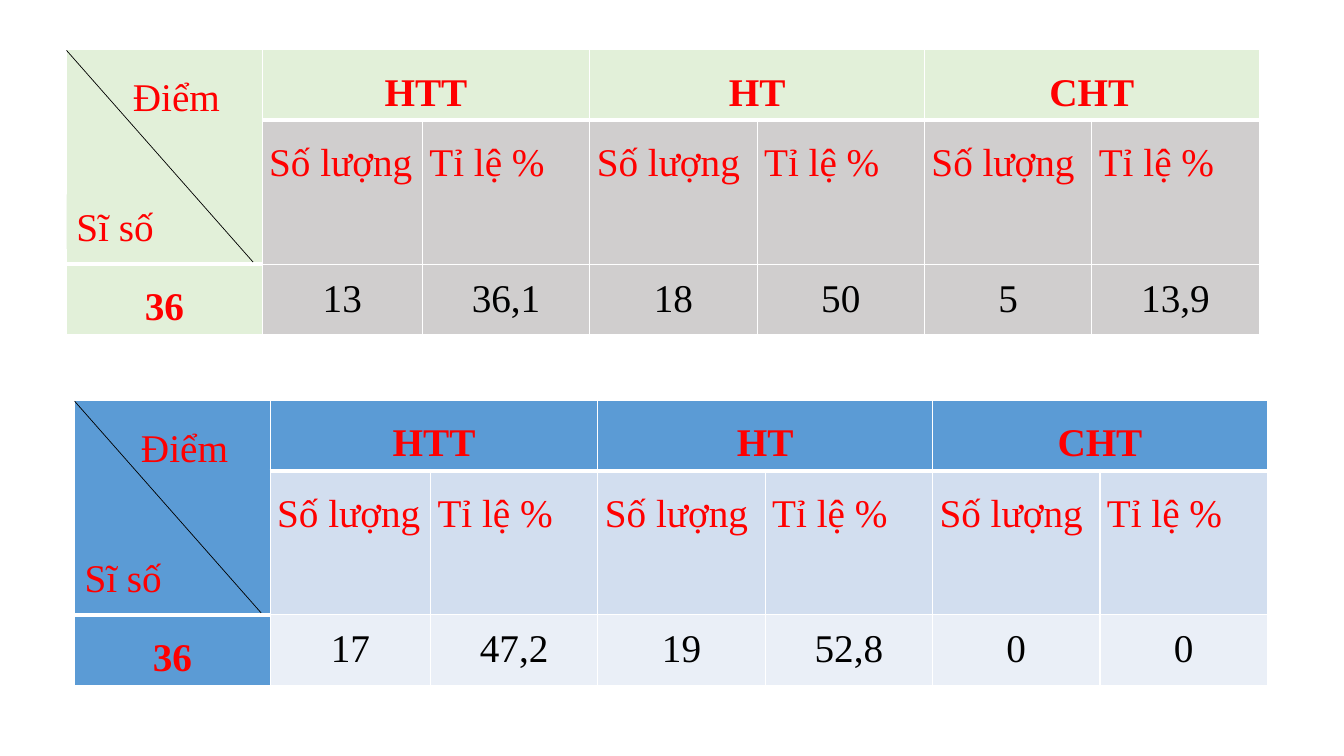
from lxml.etree import SubElement
from pptx import Presentation
from pptx.dml.color import RGBColor
from pptx.enum.shapes import MSO_CONNECTOR, MSO_SHAPE
from pptx.enum.text import MSO_ANCHOR, PP_ALIGN as Align
from pptx.oxml import parse_xml
from pptx.oxml.ns import nsdecls, qn
from pptx.util import Inches, Pt

FONT = "Times New Roman"
RED, BLACK, WHITE = "FF0000", "000000", "FFFFFF"
COLUMNS = [1.94, 1.59] + [1.66] * 5
ROWS = [0.7, 1.43, 0.7]
LEVELS = ["HTT", "HT", "CHT"]


def color(value):
    return RGBColor.from_string(value)


def write(frame, text, fill=RED, bold=False, align=Align.LEFT, spacing=1.07, after=0):
    paragraph = frame.paragraphs[0]
    paragraph.alignment = align
    paragraph.line_spacing = spacing
    paragraph.space_before = Pt(0)
    paragraph.space_after = Pt(after)
    run = paragraph.add_run()
    run.text = text
    run.font.name = FONT
    run.font.size = Pt(28)
    run.font.bold = bold
    run.font.color.rgb = color(fill)


def set_borders(cell, top, bottom):
    properties = cell._tc.get_or_add_tcPr()
    widths = {"lnL": 1, "lnR": 1, "lnT": top, "lnB": bottom}
    for index, (side, width) in enumerate(widths.items()):
        properties.insert(index, parse_xml(
            f'<a:{side} {nsdecls("a")} w="{Pt(width)}"><a:solidFill>'
            f'<a:srgbClr val="{WHITE}"/></a:solidFill></a:{side}>'))


def add_score_table(slide, left, top, values, header_fill, label_fill, value_fill):
    frame = slide.shapes.add_table(
        len(ROWS), len(COLUMNS), Inches(left), Inches(top),
        Inches(sum(COLUMNS)), Inches(sum(ROWS)))
    table = frame.table
    for column, width in zip(table.columns, COLUMNS):
        column.width = Inches(width)
    for row, height in zip(table.rows, ROWS):
        row.height = Inches(height)

    # Fills, margins and borders
    for r, body_fill in enumerate([header_fill, label_fill, value_fill]):
        for c in range(len(COLUMNS)):
            cell = table.cell(r, c)
            cell.fill.solid()
            cell.fill.fore_color.rgb = color(header_fill if c == 0 else body_fill)
            cell.margin_left = cell.margin_right = Inches(0.07)
            cell.margin_top = cell.margin_bottom = 0
            under_header = r == 1 or (r == 2 and c == 0)
            above_body = r == 0 or (r == 1 and c == 0)
            set_borders(cell, 3 if under_header else 1, 3 if above_body else 1)

    # Header cells
    table.cell(0, 0).merge(table.cell(1, 0))
    for index, level in enumerate(LEVELS):
        first = 1 + 2 * index
        table.cell(0, first).merge(table.cell(0, first + 1))
        write(table.cell(0, first).text_frame, level, bold=True,
              align=Align.CENTER, spacing=1.5)
        for offset, label in enumerate(["Số lượng", "Tỉ lệ %"]):
            write(table.cell(1, first + offset).text_frame, label,
                  align=Align.JUSTIFY, spacing=1.5)

    # Class size and results
    write(table.cell(2, 0).text_frame, "36", bold=True, align=Align.CENTER, spacing=1.5)
    for c, value in enumerate(values, start=1):
        write(table.cell(2, c).text_frame, value, BLACK,
              align=Align.CENTER, spacing=1.3, after=8)


def add_corner_label(slide, text, left, top, width, height, fill):
    box = Inches(left), Inches(top), Inches(width), Inches(height)
    if fill:
        label = slide.shapes.add_shape(MSO_SHAPE.RECTANGLE, *box)
        label.shadow.inherit = False
        label.fill.solid()
        label.fill.fore_color.rgb = color(fill)
        label.line.fill.background()
    else:
        label = slide.shapes.add_textbox(*box)
    label.text_frame.word_wrap = True
    label.text_frame.vertical_anchor = MSO_ANCHOR.TOP
    write(label.text_frame, text, after=8)


def add_split_corner(slide, left, top, label_fill=None):
    add_corner_label(slide, "Điểm", left + 0.56, top + 0.15, 1.35, 0.64, label_fill)
    add_corner_label(slide, "Sĩ số", left, top + 1.44, 1.49, 0.54, label_fill)
    diagonal = slide.shapes.add_connector(
        MSO_CONNECTOR.STRAIGHT, Inches(left), Inches(top + 0.01),
        Inches(left + 1.85), Inches(top + 2.11))
    diagonal.line.color.rgb = color(BLACK)
    diagonal.line.width = Pt(0.5)
    SubElement(diagonal._element.spPr, qn("a:effectLst"))


def main():
    presentation = Presentation()
    presentation.slide_width = Inches(13.33)
    presentation.slide_height = Inches(7.5)
    slide = presentation.slides.add_slide(presentation.slide_layouts[6])

    # Lower table, blue
    add_score_table(slide, 0.74, 3.97, ["17", "47,2", "19", "52,8", "0", "0"],
                    "5B9BD5", "D2DEEF", "EAEFF7")
    add_split_corner(slide, 0.74, 3.97)

    # Upper table, green and grey
    add_score_table(slide, 0.66, 0.49, ["13", "36,1", "18", "50", "5", "13,9"],
                    "E2F0D9", "D0CECE", "D0CECE")
    add_split_corner(slide, 0.66, 0.49, "E2F0D9")

    presentation.save("out.pptx")


if __name__ == "__main__":
    main()
